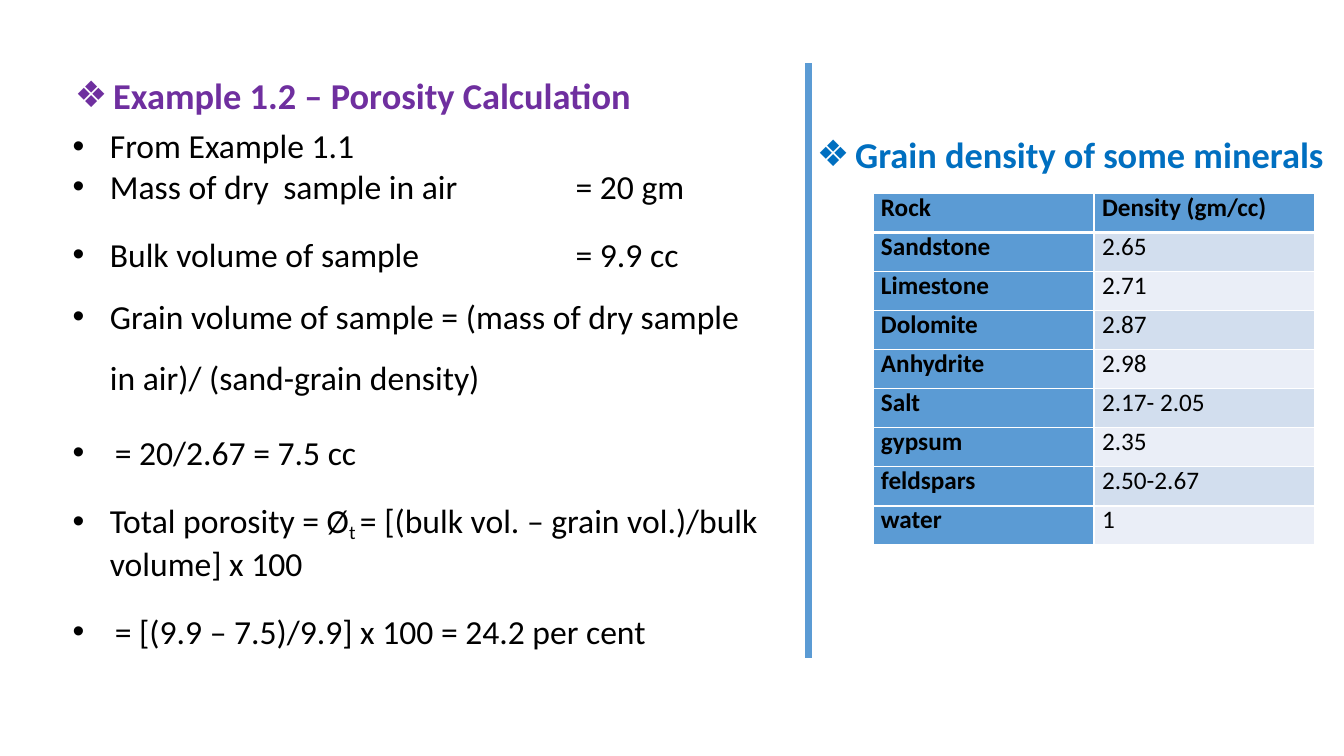
import pptx
import pptx.util
import pptx.dml.color
import pptx.enum.shapes
import pptx.enum.text
import pptx.oxml.ns
import lxml.etree

COLORS = {"purple": "6F2F9F", "blue": "006FC0", "steel": "5B9BD4", "pale": "D2DEEE",
          "mist": "EAEEF7", "black": "000000", "white": "FFFFFF"}
RGB = {name: pptx.dml.color.RGBColor.from_string(value) for name, value in COLORS.items()}
qn = pptx.oxml.ns.qn

deck = pptx.Presentation()
deck.slide_width = pptx.util.Inches(13.33)
deck.slide_height = pptx.util.Inches(7.5)
column = deck.slide_width / 100
row = deck.slide_height / 100
page = deck.slides.add_slide(deck.slide_layouts[5])


def set_up_box(box, left, top, width, height):
    box.left, box.width = round(left * column), round(width * column)
    box.top, box.height = round(top * row), round(height * row)
    frame = box.text_frame
    frame.word_wrap = True
    frame.auto_size = pptx.enum.text.MSO_AUTO_SIZE.NONE
    frame.vertical_anchor = pptx.enum.text.MSO_ANCHOR.TOP
    frame.margin_left = frame.margin_right = frame.margin_bottom = 0
    frame.margin_top = pptx.util.Pt(1.5)
    return frame


def format_para(para, symbol, margin, hanging, tabs, size, color, bold):
    para.alignment = pptx.enum.text.PP_ALIGN.LEFT
    properties = para._p.get_or_add_pPr()
    properties.set("marL", str(pptx.util.Inches(margin)))
    properties.set("indent", str(-pptx.util.Inches(hanging)))
    if symbol:
        lxml.etree.SubElement(properties, qn("a:buFont"), typeface="Arial")
        lxml.etree.SubElement(properties, qn("a:buChar"), char=symbol)
    if tabs:
        tab_list = lxml.etree.SubElement(properties, qn("a:tabLst"))
        for tab in tabs:
            lxml.etree.SubElement(tab_list, qn("a:tab"), pos=str(pptx.util.Inches(tab)), algn="l")
    for span in para.runs:
        span.font.name = "Calibri"
        span.font.size = pptx.util.Pt(size)
        span.font.bold = bold
        span.font.color.rgb = RGB[color]


minerals_box = page.shapes.add_textbox(0, 0, 0, 0)
headings = [
    (page.shapes.title, (5.5, 9.33, 45, 6.1), "Example 1.2 – Porosity Calculation", "purple"),
    (minerals_box, (60.7, 17.2, 39.2, 6.1), "Grain density of some minerals", "blue"),
]
for box, place, text, color in headings:
    frame = set_up_box(box, *place)
    frame.text = text
    format_para(frame.paragraphs[0], "❖", 0.39, 0.38, [], 26, color, True)

steps = [
    ((5.25, 16.3, 52, 36.4), [
        ("From Example 1.1", "•", 0.39, 0.37, 0, 1, []),
        ("Mass of dry\tsample in air\t= 20 gm", "•", 0.39, 0.37, 0, 1, [2.11, 5.01]),
        ("Bulk volume of sample\t= 9.9 cc", "•", 0.39, 0.37, 19.9, 1, [5.01]),
        ("Grain volume of sample = (mass of dry sample in air)/ (sand-grain density)",
         "•", 0.39, 0.37, 1.4, 1.5, []),
    ]),
    ((4.95, 56.8, 51.45, 29.2), [
        ("= 20/2.67 = 7.5 cc", "•", 0.48, 0.42, 0, 1, []),
        ("Total porosity = Ø|t |= [(bulk vol. – grain vol.)/bulk", "•", 0.43, 0.37, 19.9, 1, []),
        ("volume] x 100", "", 0.43, 0, 0, 1, []),
        ("= [(9.9 – 7.5)/9.9] x 100 = 24.2 per cent", "•", 0.48, 0.42, 20, 1, []),
    ]),
]
for place, lines in steps:
    frame = set_up_box(page.shapes.add_textbox(0, 0, 0, 0), *place)
    for number, (text, symbol, margin, hanging, before, spacing, tabs) in enumerate(lines):
        para = frame.add_paragraph() if number else frame.paragraphs[0]
        for position, part in enumerate(text.split("|")):
            span = para.add_run()
            span.text = part
            if position == 1:
                span.font._element.set("baseline", "-17000")
        para.space_before = pptx.util.Pt(before)
        para.line_spacing = float(spacing)
        format_para(para, symbol, margin, hanging, tabs, 24, "black", False)

densities = [
    ("Rock", "Density (gm/cc)"), ("Sandstone", "2.65"), ("Limestone", "2.71"),
    ("Dolomite", "2.87"), ("Anhydrite", "2.98"), ("Salt", "2.17- 2.05"),
    ("gypsum", "2.35"), ("feldspars", "2.50-2.67"), ("water", "1"),
]
table = page.shapes.add_table(len(densities), 2, round(64.95 * column), round(25.6 * row),
                              round(32.9 * column), round(46.5 * row)).table
table.first_row = table.horz_banding = False
for r, record in enumerate(densities):
    for c, text in enumerate(record):
        cell = table.cell(r, c)
        cell.margin_left = pptx.util.Inches(0.08)
        cell.margin_right = cell.margin_top = cell.margin_bottom = 0
        shaded = r == 0 or c == 0
        cell.fill.solid()
        cell.fill.fore_color.rgb = RGB["steel" if shaded else "pale" if r % 2 else "mist"]
        cell.text_frame.text = text
        para = cell.text_frame.paragraphs[0]
        para.line_spacing = pptx.util.Pt(21)
        format_para(para, "", 0, 0, [], 18, "black", shaded)
        for order, side in enumerate(("lnL", "lnR", "lnT", "lnB")):
            thick = (r, side) in ((0, "lnB"), (1, "lnT"))
            border = lxml.etree.Element(qn("a:" + side), w=str(pptx.util.Pt(3 if thick else 1)))
            paint = lxml.etree.SubElement(border, qn("a:solidFill"))
            lxml.etree.SubElement(paint, qn("a:srgbClr"), val=COLORS["white"])
            cell._tc.get_or_add_tcPr().insert(order, border)

divider = page.shapes.add_connector(
    pptx.enum.shapes.MSO_CONNECTOR.STRAIGHT,
    round(60.15 * column), round(8.4 * row), round(60.15 * column), round(87.07 * row))
divider.line.color.rgb = RGB["steel"]
divider.line.width = pptx.util.Pt(4.8)
lxml.etree.SubElement(divider._element.spPr, qn("a:effectLst"))

deck.save("out.pptx")
